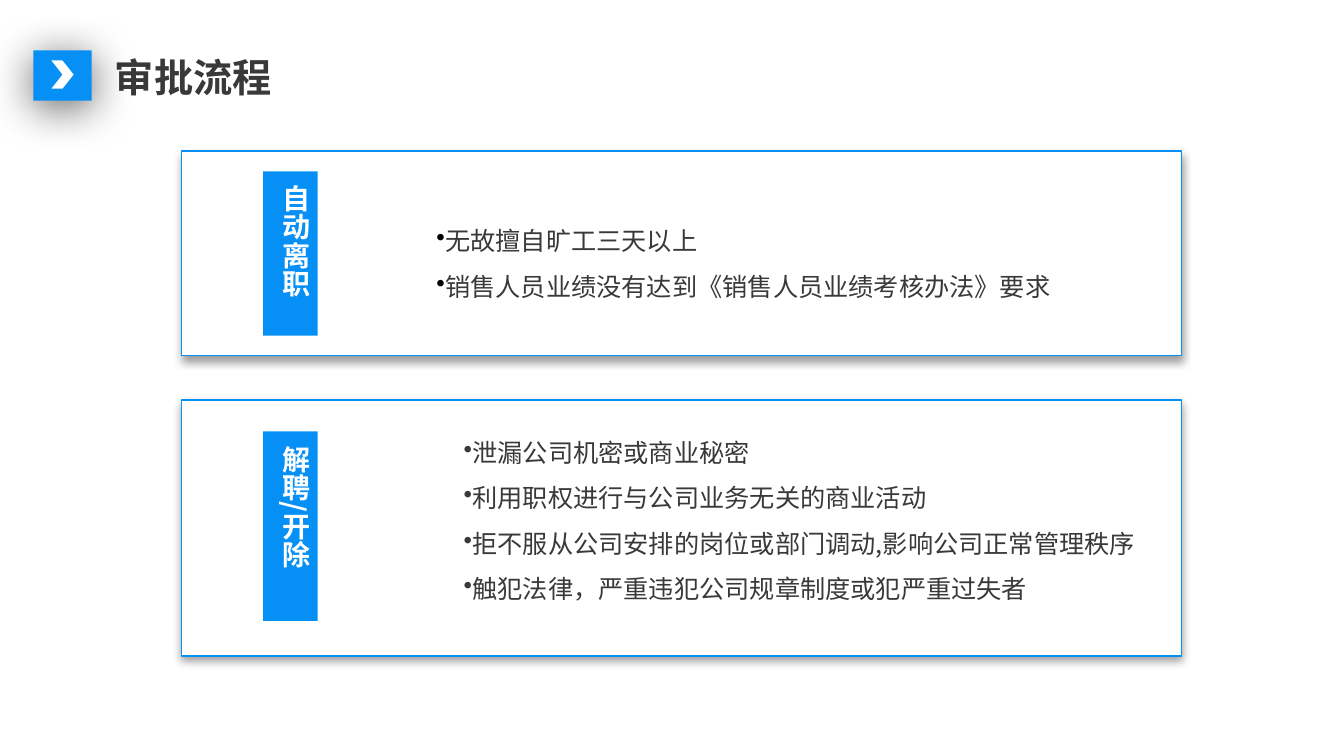
import dataclasses
import pptx
import pptx.dml.color
import pptx.enum.shapes
import pptx.enum.text
import pptx.oxml
import pptx.oxml.ns
import pptx.util

Inches = pptx.util.Inches
Pt = pptx.util.Pt
Rgb = pptx.dml.color.RGBColor
Kind = pptx.enum.shapes.MSO_SHAPE
Align = pptx.enum.text.PP_ALIGN
Anchor = pptx.enum.text.MSO_ANCHOR
Fit = pptx.enum.text.MSO_AUTO_SIZE


@dataclasses.dataclass(frozen=True)
class Theme:
    blue: str = "068FF5"
    white: str = "FFFFFF"
    ink: str = "3B3838"
    black: str = "000000"
    face: str = "Noto Sans CJK SC"
    head: int = 28
    tag: int = 20
    body: int = 18


THEME = Theme()


def put(item, values):
    for name, value in values.items():
        setattr(item, name, value)


def node(parent, tag, **attrs):
    child = pptx.oxml.parse_xml(f"<a:{tag} {pptx.oxml.ns.nsdecls('a')}/>")
    for name, value in attrs.items():
        child.set(name, str(value))
    parent.append(child)
    return child


def place(item, box):
    put(item, dict(zip(("left", "top", "width", "height"), map(Inches, box))))


def paint(shape, fill, line=None):
    shape.fill.solid()
    shape.fill.fore_color.rgb = Rgb.from_string(fill)
    if line:
        shape.line.color.rgb = Rgb.from_string(line)
        shape.line.width = Pt(1)
    else:
        shape.line.fill.background()
    shape.shadow.inherit = False


def shade(shape, alpha, blur, dist):
    effect = shape._element.spPr.find(pptx.oxml.ns.qn("a:effectLst"))
    cast = node(effect, "outerShdw", blurRad=Pt(blur), dist=Pt(dist),
                dir=5400000, algn="t", rotWithShape=0)
    color = node(cast, "srgbClr", val=THEME.black)
    node(color, "alpha", val=alpha * 1000)


def write(frame, lines, size, color, form, bold=False, margin=0, indent=0):
    frame.text = "\n".join(lines)
    for para in frame.paragraphs:
        put(para, form)
        props = para._p.get_or_add_pPr()
        props.set("marL", str(Inches(margin)))
        props.set("indent", str(Inches(indent)))
        font = para.runs[0].font
        put(font, {"size": Pt(size), "bold": bold, "name": THEME.face})
        font.color.rgb = Rgb.from_string(color)
        node(font._element, "ea", typeface=THEME.face)


def block(shapes, kind, box, fill):
    shape = shapes.add_shape(kind, *map(Inches, box))
    paint(shape, fill)
    return shape


def header(slide, box):
    left, top, width, height = box
    icon = slide.shapes.add_group_shape().shapes
    tile = block(icon, Kind.RECTANGLE, (left, top, 0.58, height), THEME.blue)
    shade(tile, 62, 32, 5)
    block(icon, Kind.CHEVRON, (left + 0.18, top + 0.1, 0.22, 0.28), THEME.white)
    title = slide.shapes.title
    place(title, (left + 0.71, top + 0.03, width - 0.71, 0.53))
    put(title.text_frame, {"word_wrap": False, "auto_size": Fit.SHAPE_TO_FIT_TEXT,
                           "vertical_anchor": Anchor.TOP})
    write(title.text_frame, ["审批流程"], THEME.head, THEME.ink,
          {"alignment": Align.LEFT, "line_spacing": 0.9}, True, 0.25, -0.25)


def panel(slide, box, tag, band, lines, drop, span, margin, indent, dot):
    left, top, width, height = box
    shapes = slide.shapes.add_group_shape().shapes
    right, base = left + width, top + height
    path = shapes.build_freeform(Inches(left), Inches(top))
    path.add_line_segments([(Inches(x), Inches(y)) for x, y in
                            ((right, top), (right, base), (left, base))])
    card = path.convert_to_shape()
    paint(card, THEME.white, THEME.blue)
    shade(card, 39, 6, 3)

    area = (left + 2.39, top + drop, span, 0.48 * len(lines))
    notes = shapes.add_textbox(*map(Inches, area)).text_frame
    put(notes, {"word_wrap": True, "auto_size": Fit.SHAPE_TO_FIT_TEXT})
    write(notes, lines, THEME.body, THEME.ink, {"line_spacing": 1.5},
          margin=margin, indent=indent)
    for para in notes.paragraphs:
        props = para._p.get_or_add_pPr()
        node(node(props, "buClr"), "srgbClr", val=dot)
        node(props, "buChar", char="•")

    space, tall = band
    label = block(shapes, Kind.RECTANGLE,
                  (left + 0.81, top + space, 0.54, tall), THEME.blue)
    frame = label.text_frame
    put(frame, {"word_wrap": True, "auto_size": Fit.SHAPE_TO_FIT_TEXT,
                "vertical_anchor": Anchor.TOP})
    frame._txBody.bodyPr.set("vert", "eaVert")
    write(frame, [tag], THEME.tag, THEME.white, {"alignment": Align.CENTER},
          True, 0.04)


def main():
    deck = pptx.Presentation()
    put(deck, {"slide_width": Inches(13.33), "slide_height": Inches(7.5)})
    slide = deck.slides.add_slide(deck.slide_layouts[5])
    header(slide, (0.33, 0.5, 2.48, 0.5))
    panel(slide, (1.8, 1.5, 9.92, 2.03), "自动离职", (0.2, 1.63),
          ["无故擅自旷工三天以上",
           "销售人员业绩没有达到《销售人员业绩考核办法》要求"],
          0.54, 6.67, 0.04, 0, THEME.black)
    panel(slide, (1.8, 3.97, 9.92, 2.54), "解聘/开除", (0.31, 1.88),
          ["泄漏公司机密或商业秘密",
           "利用职权进行与公司业务无关的商业活动",
           "拒不服从公司安排的岗位或部门调动,影响公司正常管理秩序",
           "触犯法律，严重违犯公司规章制度或犯严重过失者"],
          0.17, 7.53, 0, 0.31, THEME.ink)
    deck.save("out.pptx")


if __name__ == "__main__":
    main()
